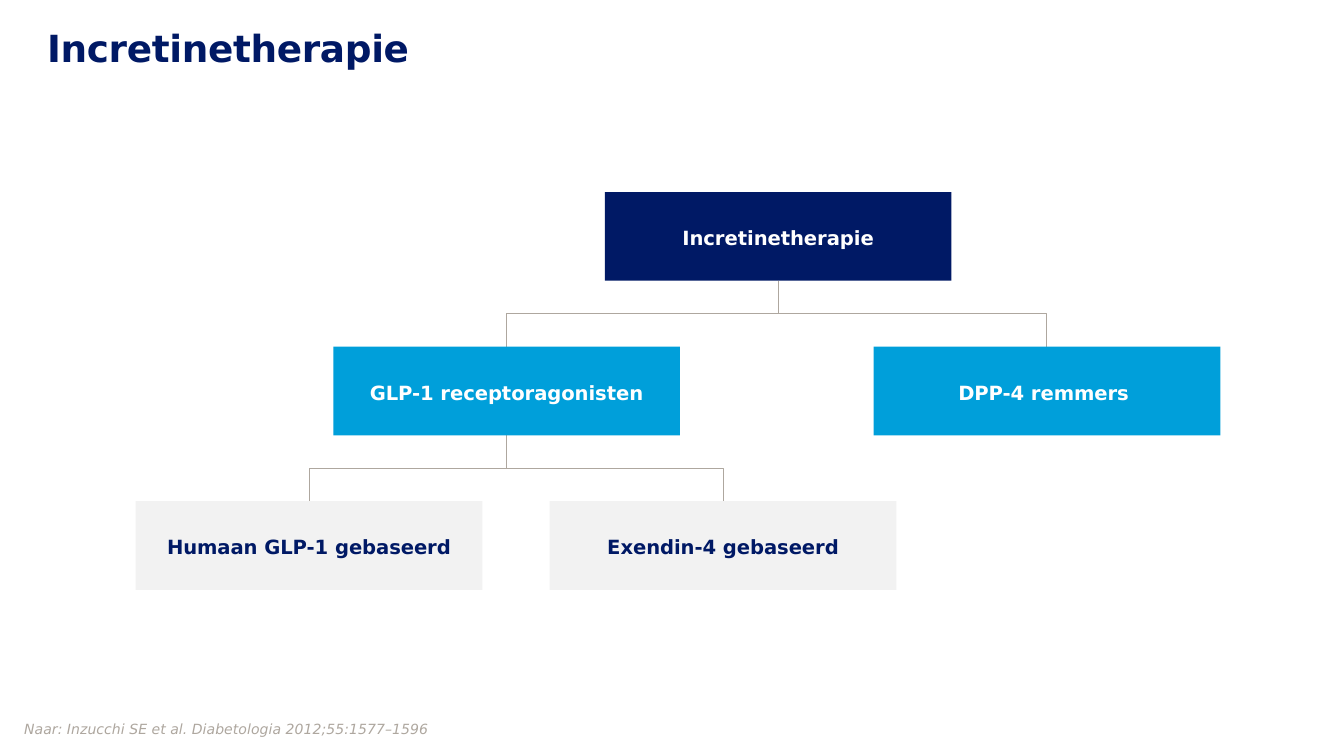
from dataclasses import dataclass

import pptx
import pptx.dml.color
import pptx.enum.shapes
import pptx.enum.text
import pptx.oxml.ns
import pptx.util
from lxml import etree
from pptx.util import Inches

MIDDLE = pptx.enum.text.MSO_ANCHOR.MIDDLE


@dataclass(frozen=True)
class Theme:
    font: str = "DejaVu Sans"
    navy: str = "001965"
    blue: str = "009FDA"
    pale: str = "F2F2F2"
    white: str = "FFFFFF"
    stone: str = "AEA79F"
    title_size: float = 20
    node_size: float = 10.5
    source_size: float = 7.5
    line_width: float = 0.5


@dataclass(frozen=True)
class Node:
    text: str
    left: float
    children: tuple = ()


THEME = Theme()
NODE_WIDTH, NODE_HEIGHT = 2.58, 0.66
TREE_TOP, LEVEL_STEP = 1.43, 1.15
LEVEL_COLORS = (  # fill and text colour, from the root down
    (THEME.navy, THEME.white),
    (THEME.blue, THEME.white),
    (THEME.pale, THEME.navy),
)
THERAPY = Node("Incretinetherapie", 4.5, (
    Node("GLP-1 receptoragonisten", 2.48, (
        Node("Humaan GLP-1 gebaseerd", 1.01),
        Node("Exendin-4 gebaseerd", 4.09),
    )),
    Node("DPP-4 remmers ", 6.5),
))


def rgb(color):
    return pptx.dml.color.RGBColor.from_string(color)


def set_frame(frame, anchor, insets):
    """Wrap and anchor a text frame; insets run left, top, right, bottom."""
    frame.word_wrap = True
    frame.auto_size = pptx.enum.text.MSO_AUTO_SIZE.NONE
    frame.vertical_anchor = anchor
    (frame.margin_left, frame.margin_top,
     frame.margin_right, frame.margin_bottom) = map(Inches, insets)


def write(frame, text, size, color, align="LEFT", spacing=0.9, bold=False, italic=False):
    para = frame.paragraphs[0]
    para.alignment = pptx.enum.text.PP_ALIGN[align]
    para.line_spacing = spacing
    para.space_before = pptx.util.Pt(0)
    span = para.add_run()
    span.text = text
    span.font.name = THEME.font
    span.font.size = pptx.util.Pt(size)
    span.font.color.rgb = rgb(color)
    span.font.bold = bold
    span.font.italic = italic
    return span


def add_title(page, text):
    title = page.shapes.title
    title.left, title.top = Inches(0.35), Inches(0.25)
    title.width, title.height = Inches(8.72), Inches(0.71)
    set_frame(title.text_frame, pptx.enum.text.MSO_ANCHOR.TOP, (0, 0, 0, 0))
    span = write(title.text_frame, text, THEME.title_size, THEME.navy,
                 spacing=0.8, bold=True)
    span.font._element.set("spc", "-20")


def add_branch(page, start_x, start_y, end_x, end_y):
    """Draw an elbow that leaves a parent downwards and enters a child from above."""
    side = 1 if end_x > start_x else -1
    middle_x, middle_y = (start_x + end_x) / 2, (start_y + end_y) / 2
    half_drop, half_span = (end_y - start_y) / 2, abs(end_x - start_x) / 2
    # The elbow is laid out sideways, then turned a quarter about its centre.
    branch = page.shapes.add_connector(
        pptx.enum.shapes.MSO_CONNECTOR.ELBOW,
        Inches(middle_x + side * half_drop), Inches(middle_y - half_span),
        Inches(middle_x - side * half_drop), Inches(middle_y + half_span))
    if side < 0:
        quarter_turns = 1
    else:
        quarter_turns = 3
    branch.line.color.rgb = rgb(THEME.stone)
    branch.line.width = pptx.util.Pt(THEME.line_width)
    properties = branch.element.spPr
    properties.find(pptx.oxml.ns.qn("a:xfrm")).set("rot", str(quarter_turns * 5400000))
    etree.SubElement(properties, pptx.oxml.ns.qn("a:effectLst"))


def add_node(page, node, level):
    fill, color = LEVEL_COLORS[level]
    box = page.shapes.add_shape(
        pptx.enum.shapes.MSO_SHAPE.RECTANGLE,
        Inches(node.left), Inches(TREE_TOP + level * LEVEL_STEP),
        Inches(NODE_WIDTH), Inches(NODE_HEIGHT))
    box.shadow.inherit = False
    box.fill.solid()
    box.fill.fore_color.rgb = rgb(fill)
    box.line.fill.background()
    set_frame(box.text_frame, MIDDLE, (0.08, 0.12, 0.08, 0.08))
    write(box.text_frame, node.text, THEME.node_size, color, align="CENTER", bold=True)


def add_tree(page, node, level=0):
    """Draw a node, its branches and everything below it."""
    bottom = TREE_TOP + level * LEVEL_STEP + NODE_HEIGHT
    child_top = TREE_TOP + (level + 1) * LEVEL_STEP
    for child in node.children:
        add_branch(page, node.left + NODE_WIDTH / 2, bottom,
                   child.left + NODE_WIDTH / 2, child_top)
    add_node(page, node, level)
    for child in node.children:
        add_tree(page, child, level + 1)


def add_source(page, text):
    box = page.shapes.add_textbox(Inches(-0.47), Inches(4.8), Inches(10), Inches(1.26))
    set_frame(box.text_frame, MIDDLE, (0.65, 0.35, 0.65, 0.35))
    write(box.text_frame, text, THEME.source_size, THEME.stone, italic=True)


def main():
    deck = pptx.Presentation()
    deck.slide_width = Inches(10)
    deck.slide_height = deck.slide_width * 9 // 16
    page = deck.slides.add_slide(deck.slide_layouts.get_by_name("Title Only"))
    page.background.fill.solid()
    page.background.fill.fore_color.rgb = rgb(THEME.white)
    add_title(page, "Incretinetherapie")
    add_tree(page, THERAPY)
    add_source(page, "Naar: Inzucchi SE et al. Diabetologia 2012;55:1577–1596")
    deck.save("out.pptx")


if __name__ == "__main__":
    main()
